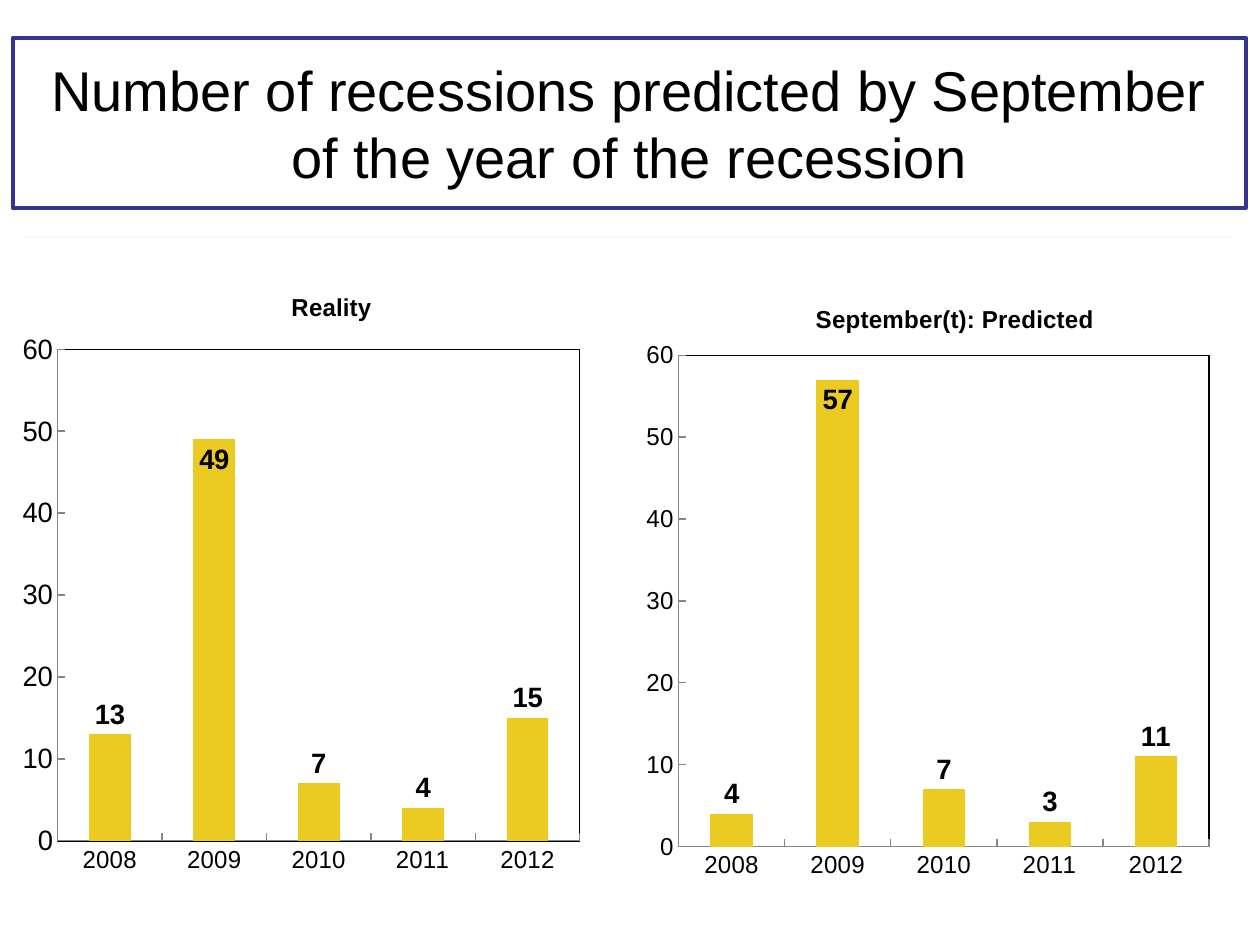
from dataclasses import dataclass

from lxml.etree import SubElement
from pptx import Presentation
from pptx.chart.axis import _BaseAxis
from pptx.chart.chart import Chart
from pptx.chart.data import CategoryChartData
from pptx.dml.color import RGBColor
from pptx.enum.chart import XL_CHART_TYPE, XL_LABEL_POSITION, XL_TICK_MARK
from pptx.enum.shapes import MSO_CONNECTOR
from pptx.enum.text import MSO_ANCHOR, PP_ALIGN
from pptx.oxml import parse_xml
from pptx.oxml.ns import nsdecls, qn
from pptx.slide import Slide
from pptx.util import Inches, Pt


@dataclass(frozen=True)
class Theme:
    font: str = "Arial"
    text: RGBColor = RGBColor(0x00, 0x00, 0x00)
    background: RGBColor = RGBColor(0xFF, 0xFF, 0xFF)
    frame: RGBColor = RGBColor(0x33, 0x33, 0x99)
    rule: RGBColor = RGBColor(0xF9, 0xF9, 0xF9)
    axis: RGBColor = RGBColor(0x86, 0x86, 0x86)
    bar: RGBColor = RGBColor(0xEB, 0xCA, 0x21)
    title_size: int = 32
    chart_size: int = 14
    label_size: int = 16


@dataclass(frozen=True)
class RecessionChart:
    title: str
    counts: tuple[int, ...]
    box: tuple[float, float, float, float]
    title_at: tuple[float, float]
    plot_box: tuple[float, float, float, float]
    value_size: int


THEME = Theme()
YEARS = ("2008", "2009", "2010", "2011", "2012")
AXIS_MAXIMUM = 60
TALL_BAR = 40
CHARTS = (
    RecessionChart("Reality", (13, 49, 7, 4, 15), (0.18, 2.08, 4.65, 4.94),
                   (0.44, 0.04), (0.04, 0.14, 0.91, 0.79), 16),
    RecessionChart("September(t): Predicted", (4, 57, 7, 3, 11), (5.13, 2.17, 4.65, 5),
                   (0.27, 0.04), (0.04, 0.13, 0.92, 0.78), 14),
)


def style_font(font, size: int, bold: bool = False) -> None:
    font.name = THEME.font
    font.size = Pt(size)
    font.bold = bold
    font.color.rgb = THEME.text


def make_layout(position: tuple[float, ...], inner: bool = False):
    layout = parse_xml(f"<c:layout {nsdecls('c')}/>")
    manual = SubElement(layout, qn("c:manualLayout"))
    if inner:
        SubElement(manual, qn("c:layoutTarget"), val="inner")
    for side in ("x", "y"):
        SubElement(manual, qn(f"c:{side}Mode"), val="edge")
    for side, value in zip(("x", "y", "w", "h"), position):
        SubElement(manual, qn(f"c:{side}"), val=str(value))
    return layout


def add_title(page: Slide) -> None:
    title = page.shapes.title
    title.left, title.top = Inches(0.1), Inches(0.3)
    title.width, title.height = Inches(9.79), Inches(1.35)
    title.line.color.rgb = THEME.frame
    title.line.width = Pt(2.25)
    frame = title.text_frame
    frame.text = "Number of recessions predicted by September of the year of the recession"
    frame.word_wrap = True
    frame.vertical_anchor = MSO_ANCHOR.MIDDLE
    para = frame.paragraphs[0]
    para.alignment = PP_ALIGN.CENTER
    style_font(para.runs[0].font, THEME.title_size)


def add_rule(page: Slide) -> None:
    rule = page.shapes.add_connector(
        MSO_CONNECTOR.STRAIGHT, Inches(0.18), Inches(1.88), Inches(9.78), Inches(1.88))
    rule.line.color.rgb = THEME.rule
    rule.line.width = Pt(1.5)
    SubElement(rule.element.spPr, qn("a:effectLst"))


def style_axis(axis: _BaseAxis, size: int) -> None:
    axis.has_major_gridlines = False
    axis.major_tick_mark = XL_TICK_MARK.INSIDE
    axis.minor_tick_mark = XL_TICK_MARK.NONE
    axis.format.line.color.rgb = THEME.axis
    axis.format.line.width = Pt(0.75)
    style_font(axis.tick_labels.font, size)


def style_chart_title(chart: Chart, item: RecessionChart) -> None:
    chart.has_title = True
    title = chart.chart_title
    title.text_frame.text = item.title
    style_font(title.text_frame.paragraphs[0].runs[0].font, THEME.chart_size, True)
    element = title.element
    for old in element.findall(qn("c:layout")):
        element.remove(old)
    element.find(qn("c:tx")).addnext(make_layout(item.title_at))
    element.find(qn("c:overlay")).set("val", "1")


def style_plot_area(chart: Chart, item: RecessionChart) -> None:
    area = chart.element.find(f".//{qn('c:plotArea')}")
    for old in area.findall(qn("c:layout")):
        area.remove(old)
    area.insert(0, make_layout(item.plot_box, True))
    area.append(parse_xml(
        f'<c:spPr {nsdecls("c", "a")}><a:noFill/><a:ln w="{Pt(0.75)}"><a:solidFill>'
        f'<a:srgbClr val="{THEME.text}"/></a:solidFill></a:ln></c:spPr>'))


def style_bars(chart: Chart, item: RecessionChart) -> None:
    plot = chart.plots[0]
    plot.gap_width = 150
    plot.vary_by_categories = False
    series = plot.series[0]
    series.format.fill.solid()
    series.format.fill.fore_color.rgb = THEME.bar
    series.data_labels.show_value = True
    style_font(series.data_labels.font, THEME.label_size, True)
    for index, count in enumerate(item.counts):
        label = series.points[index].data_label
        style_font(label.font, THEME.label_size, True)
        label.position = (XL_LABEL_POSITION.INSIDE_END if count > TALL_BAR
                          else XL_LABEL_POSITION.OUTSIDE_END)


def add_recession_chart(page: Slide, item: RecessionChart) -> None:
    data = CategoryChartData()
    data.categories = YEARS
    data.add_series("Series 1", item.counts)
    box = [Inches(length) for length in item.box]
    chart = page.shapes.add_chart(XL_CHART_TYPE.COLUMN_CLUSTERED, *box, data).chart
    chart.has_legend = False
    style_font(chart.font, THEME.chart_size)
    style_chart_title(chart, item)
    style_axis(chart.category_axis, THEME.chart_size)
    style_axis(chart.value_axis, item.value_size)
    chart.value_axis.minimum_scale = 0
    chart.value_axis.maximum_scale = AXIS_MAXIMUM
    chart.value_axis.major_unit = 10
    style_bars(chart, item)
    style_plot_area(chart, item)


def main() -> None:
    deck = Presentation()
    deck.slide_width, deck.slide_height = Inches(10), Inches(7.5)
    page = deck.slides.add_slide(deck.slide_layouts[5])
    page.background.fill.solid()
    page.background.fill.fore_color.rgb = THEME.background
    add_title(page)
    add_rule(page)
    for item in CHARTS:
        add_recession_chart(page, item)
    deck.save("out.pptx")


if __name__ == "__main__":
    main()
